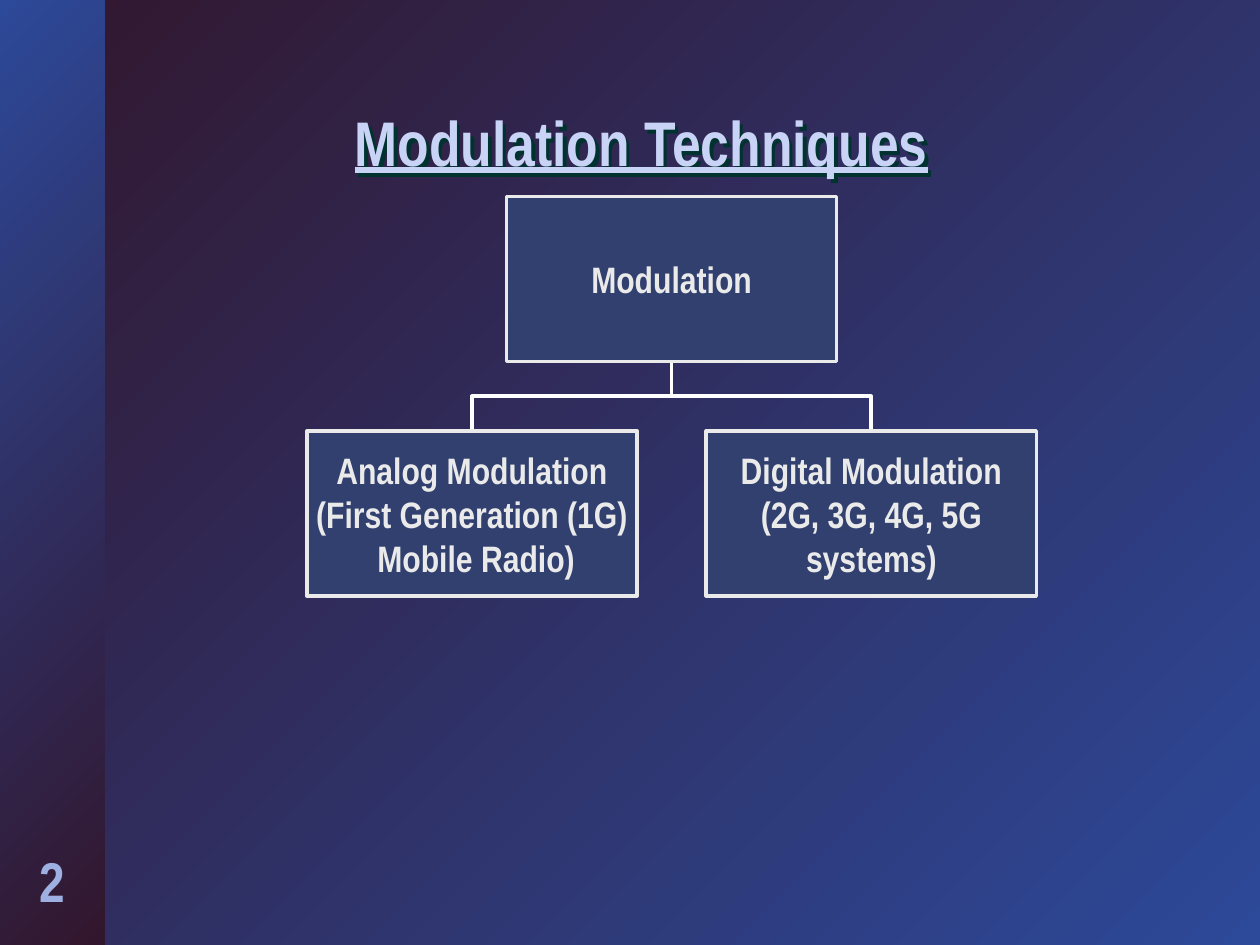
from dataclasses import dataclass

from lxml.etree import SubElement
from pptx import Presentation
from pptx.dml.color import RGBColor as Rgb
from pptx.enum.shapes import MSO_SHAPE as Kind
from pptx.enum.text import MSO_ANCHOR as Anchor, PP_ALIGN as Align
from pptx.oxml.ns import qn
from pptx.util import Inches, Pt

WIDE, HIGH = 10, 7.5
FONT = "Arial Narrow"
HEX = {
    "dark": "32162D",
    "blue": "2D4999",
    "box": "31406F",
    "edge": "EAEAEA",
    "link": "FFFFFF",
    "title": "C8D3F6",
    "shade": "00332F",
    "page": "9EB0E2",
}

# Chart grid: columns are box centres, rows are box tops.
BOX_W, BOX_H = 2.62, 1.31
MID, TOP = 5.33, 1.56
COL, ROW = 3.17, 1.86


@dataclass
class Node:
    text: str
    col: float
    row: int

    @property
    def mid(self) -> float:
        return MID + self.col * COL

    @property
    def top(self) -> float:
        return TOP + self.row * ROW


ROOT = Node("Modulation", 0, 0)
KIDS = [
    Node("Analog Modulation\n(First Generation (1G)\v Mobile Radio)", -0.5, 1),
    Node("Digital Modulation\n(2G, 3G, 4G, 5G systems)", 0.5, 1),
]


def color(name: str) -> Rgb:
    return Rgb.from_string(HEX[name])


def blend(fill, first: str, last: str) -> None:
    """Fill with a gradient from top left to bottom right."""
    fill.gradient()
    fill.gradient_angle = 315
    for stop, name in zip(fill.gradient_stops, (first, last)):
        stop.color.rgb = color(name)


def write(frame, text: str, size: float, name: str, pad: tuple[float, float],
          anchor=Anchor.MIDDLE) -> None:
    frame.text = text
    frame.word_wrap = True
    frame.vertical_anchor = anchor
    frame.margin_left = frame.margin_right = Inches(pad[0])
    frame.margin_top = frame.margin_bottom = Inches(pad[1])
    for para in frame.paragraphs:
        para.alignment = Align.CENTER
        for run in para.runs:
            font = run.font
            font.name, font.size, font.bold = FONT, Pt(size), True
            font.color.rgb = color(name)


def shade(shape) -> None:
    """Add a hard shadow down and to the right; with no fill, the text casts it."""
    shape.fill.background()
    effects = SubElement(shape.element.spPr, qn("a:effectLst"))
    shadow = SubElement(effects, qn("a:outerShdw"), dist="35921", dir="2700000")
    SubElement(shadow, qn("a:srgbClr"), val=HEX["shade"])


def add_title(slide) -> None:
    title = slide.shapes.title
    title.left, title.top = Inches(1.13), Inches(0.83)
    title.width, title.height = Inches(7.92), Inches(0.66)
    write(title.text_frame, "Modulation Techniques", 36, "title", (0.1, 0.05))
    para = title.text_frame.paragraphs[0]
    para.line_spacing = 0.9
    para.runs[0].font.underline = True
    shade(title)


def add_band(slide) -> None:
    width = WIDE / 12
    band = slide.shapes.add_shape(Kind.RECTANGLE, 0, 0, Inches(width), Inches(HIGH))
    band.shadow.inherit = False
    band.line.fill.background()
    blend(band.fill, "blue", "dark")
    page = slide.shapes.add_textbox(
        Inches(0.08), Inches(6.67), Inches(0.67), Inches(0.63))
    write(page.text_frame, "2", 32, "page", (0.1, 0.05), Anchor.TOP)


def add_link(slide, root: Node, kid: Node) -> None:
    start = root.top + BOX_H
    bend = (start + kid.top) / 2
    spots = [(root.mid, start), (root.mid, bend), (kid.mid, bend), (kid.mid, kid.top)]
    first, *rest = [(Inches(x), Inches(y)) for x, y in spots]
    path = slide.shapes.build_freeform(*first)
    path.add_line_segments(rest, close=False)
    link = path.convert_to_shape()
    link.shadow.inherit = False
    link.fill.background()
    link.line.color.rgb = color("link")
    link.line.width = Pt(2)


def add_node(slide, node: Node) -> None:
    box = slide.shapes.add_shape(
        Kind.RECTANGLE, Inches(node.mid - BOX_W / 2), Inches(node.top),
        Inches(BOX_W), Inches(BOX_H))
    box.shadow.inherit = False
    box.fill.solid()
    box.fill.fore_color.rgb = color("box")
    box.line.color.rgb = color("edge")
    box.line.width = Pt(2)
    write(box.text_frame, node.text, 21, "edge", (0.01, 0.01))


def main() -> None:
    deck = Presentation()
    deck.slide_width, deck.slide_height = Inches(WIDE), Inches(HIGH)
    slide = deck.slides.add_slide(deck.slide_layouts.get_by_name("Title Only"))
    blend(slide.background.fill, "dark", "blue")
    add_band(slide)
    add_title(slide)
    for kid in KIDS:
        add_link(slide, ROOT, kid)
    for node in (ROOT, *KIDS):
        add_node(slide, node)
    deck.save("out.pptx")


if __name__ == "__main__":
    main()
